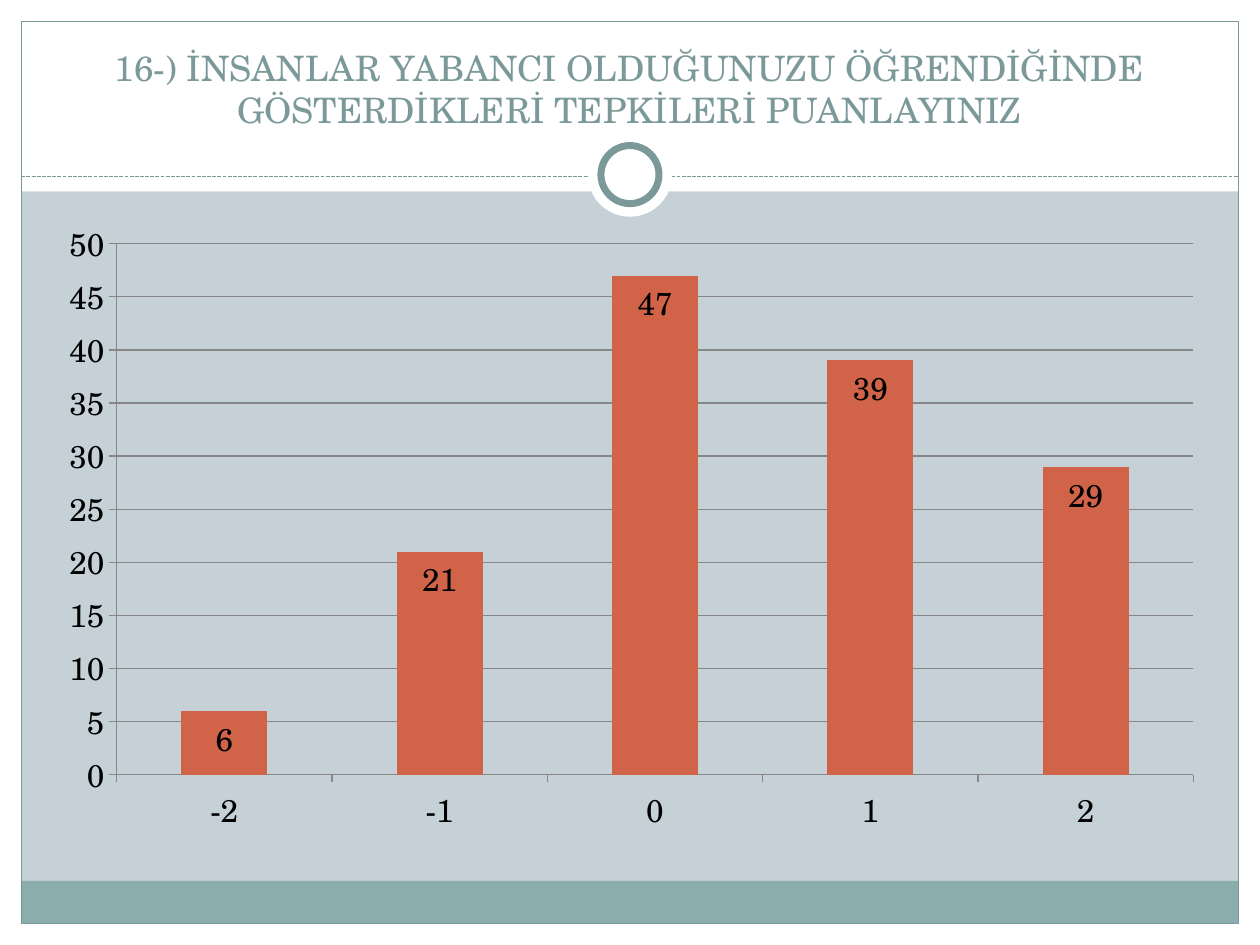
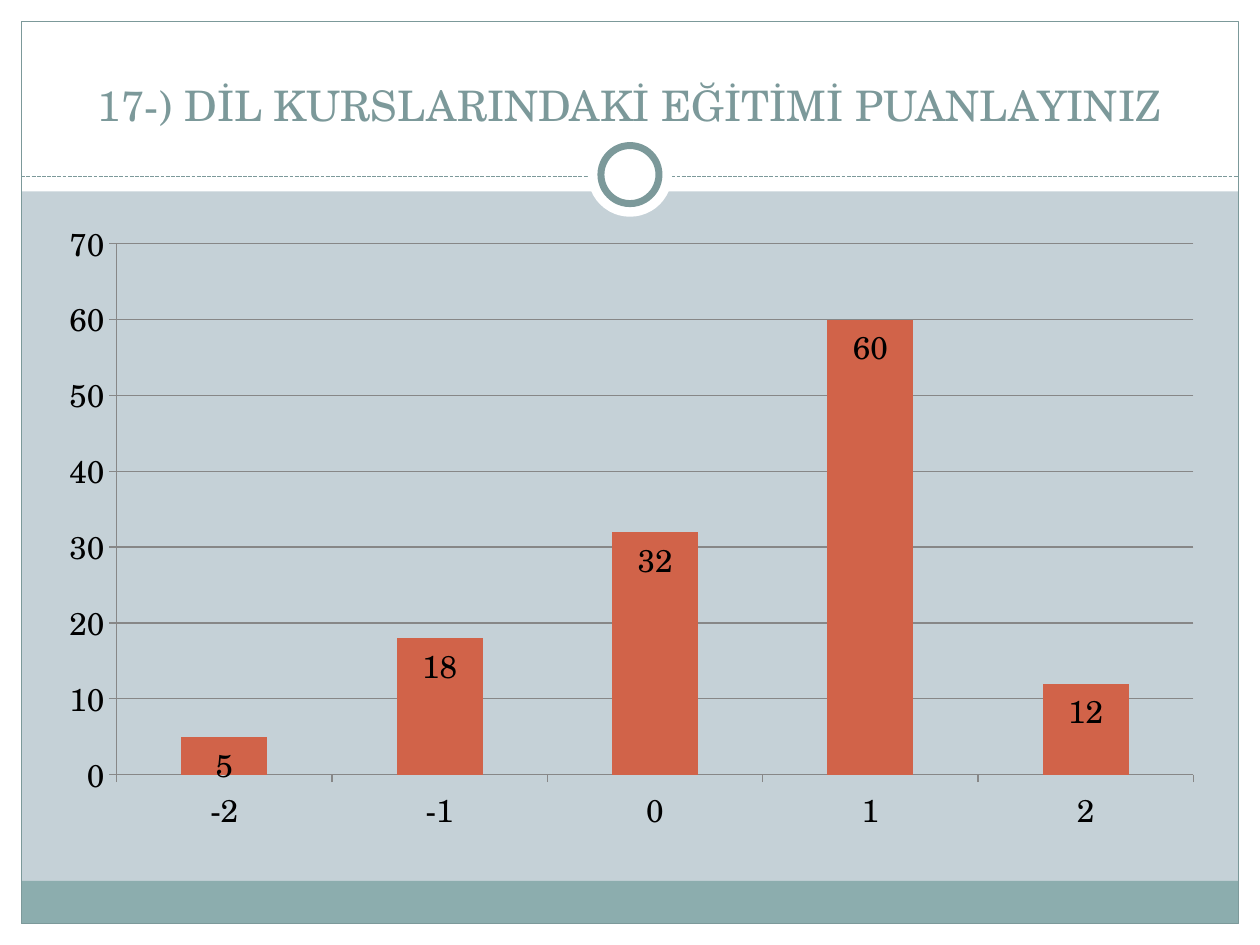
"""Build two survey slides, each with a column chart of scores from -2 to 2."""
from dataclasses import dataclass
from typing import Optional

from lxml.etree import SubElement
from pptx import Presentation
from pptx.chart.data import CategoryChartData
from pptx.dml.color import RGBColor
from pptx.enum.chart import XL_CHART_TYPE, XL_LABEL_POSITION, XL_TICK_MARK
from pptx.enum.dml import MSO_LINE
from pptx.enum.shapes import MSO_CONNECTOR, MSO_SHAPE
from pptx.enum.text import MSO_ANCHOR, PP_ALIGN
from pptx.oxml import parse_xml
from pptx.oxml.ns import nsdecls, qn
from pptx.slide import Slide
from pptx.util import Cm, Pt

COLORS = {
    "background": "C5D1D7",
    "margin": "FFFFFF",
    "footer": "8CADAE",
    "accent": "7C999A",
    "column": "D16349",
    "grid": "878787",
    "text": "000000",
}
FONT = "TeX Gyre Schola"
WIDTH, HEIGHT = 25.4, 19.05
MARGIN = 0.43
HEADER_HEIGHT = 3.86
FOOTER_HEIGHT = 0.86
DIVIDER_Y = 3.56
RING_CENTER_Y = 3.52
SCORES = ("-2", "-1", "0", "1", "2")
PLOT_AREA = {"x": 0.064, "y": 0.053, "w": 0.919, "h": 0.843}


@dataclass(frozen=True)
class Part:
    """A preset shape of the frame, in centimetres."""
    left: float
    top: float
    width: float
    height: float
    fill: Optional[str] = None
    line_width: float = 0
    preset: MSO_SHAPE = MSO_SHAPE.RECTANGLE


@dataclass(frozen=True)
class Question:
    """A survey question with its number of answers per score."""
    title: str
    title_size: int
    answers: tuple[int, ...]


def ring_part(diameter: float, line_width: float = 0) -> Part:
    """Return a white circle centred on the divider."""
    return Part((WIDTH - diameter) / 2, RING_CENTER_Y - diameter / 2,
                diameter, diameter, "margin", line_width, MSO_SHAPE.OVAL)


INNER_WIDTH = WIDTH - 2 * MARGIN
BANDS = (
    Part(0, HEIGHT - MARGIN, WIDTH, MARGIN, "margin"),
    Part(0, 0, WIDTH, HEADER_HEIGHT, "margin"),
    Part(0, 0, MARGIN, HEIGHT, "margin"),
    Part(WIDTH - MARGIN, 0, MARGIN, HEIGHT, "margin"),
    Part(MARGIN, HEIGHT - MARGIN - FOOTER_HEIGHT, INNER_WIDTH, FOOTER_HEIGHT, "footer"),
    Part(MARGIN, MARGIN, INNER_WIDTH, HEIGHT - 2 * MARGIN, line_width=0.75),
)
RINGS = (ring_part(1.7), ring_part(1.17, line_width=4))
QUESTIONS = (
    Question("16-) İNSANLAR YABANCI OLDUĞUNUZU ÖĞRENDİĞİNDE GÖSTERDİKLERİ TEPKİLERİ PUANLAYINIZ",
             20, (6, 21, 47, 39, 29)),
    Question("17-) DİL KURSLARINDAKİ EĞİTİMİ PUANLAYINIZ", 24, (5, 18, 32, 60, 12)),
)


def color(name: str) -> RGBColor:
    """Return a named colour of the palette."""
    return RGBColor.from_string(COLORS[name])


def draw_part(slide: Slide, part: Part) -> None:
    """Draw one shape of the frame."""
    shape = slide.shapes.add_shape(part.preset, Cm(part.left), Cm(part.top),
                                   Cm(part.width), Cm(part.height))
    shape.shadow.inherit = False
    if part.fill:
        shape.fill.solid()
        shape.fill.fore_color.rgb = color(part.fill)
    else:
        shape.fill.background()
    if part.line_width:
        shape.line.color.rgb = color("accent")
        shape.line.width = Pt(part.line_width)
    else:
        shape.line.fill.background()


def draw_divider(slide: Slide) -> None:
    """Draw the dashed line under the title."""
    divider = slide.shapes.add_connector(MSO_CONNECTOR.STRAIGHT, Cm(MARGIN), Cm(DIVIDER_Y),
                                         Cm(WIDTH - MARGIN), Cm(DIVIDER_Y))
    divider.line.color.rgb = color("accent")
    divider.line.width = Pt(0.75)
    divider.line.dash_style = MSO_LINE.SQUARE_DOT
    SubElement(divider.element.spPr, qn("a:effectLst"))


def draw_frame(slide: Slide) -> None:
    """Draw the background, bands, divider and rings."""
    slide.background.fill.solid()
    slide.background.fill.fore_color.rgb = color("background")
    for band in BANDS:
        draw_part(slide, band)
    draw_divider(slide)
    for ring in RINGS:
        draw_part(slide, ring)


def draw_text(slide: Slide, text: str, *, left: float, top: float, width: float, height: float,
              size: float, color_name: str, align: PP_ALIGN, anchor: MSO_ANCHOR) -> None:
    """Draw a wrapped text box."""
    frame = slide.shapes.add_textbox(Cm(left), Cm(top), Cm(width), Cm(height)).text_frame
    frame.word_wrap = True
    frame.vertical_anchor = anchor
    paragraph = frame.paragraphs[0]
    paragraph.alignment = align
    run = paragraph.add_run()
    run.text = text
    run.font.name = FONT
    run.font.size = Pt(size)
    run.font.color.rgb = color(color_name)


def draw_chart(slide: Slide, answers: tuple[int, ...]) -> None:
    """Draw the column chart of answers per score."""
    data = CategoryChartData()
    data.categories = SCORES
    data.add_series("Series 1", answers)
    chart = slide.shapes.add_chart(XL_CHART_TYPE.COLUMN_CLUSTERED, Cm(0.84), Cm(4.24),
                                   Cm(23.62), Cm(12.7), data).chart
    chart.has_title = False
    chart.has_legend = False
    chart.font.name = FONT
    chart.font.size = Pt(18)
    chart.font.color.rgb = color("text")

    chart.value_axis.has_major_gridlines = True
    for line in (chart.category_axis.format.line, chart.value_axis.format.line,
                 chart.value_axis.major_gridlines.format.line):
        line.color.rgb = color("grid")
        line.width = Pt(0.75)
    for axis in (chart.category_axis, chart.value_axis):
        axis.major_tick_mark = XL_TICK_MARK.OUTSIDE

    columns = chart.plots[0]
    columns.gap_width = 150
    columns.vary_by_categories = False
    columns.has_data_labels = True
    columns.data_labels.show_value = True
    columns.data_labels.position = XL_LABEL_POSITION.INSIDE_END
    columns.series[0].format.fill.solid()
    columns.series[0].format.fill.fore_color.rgb = color("column")

    plot_area = chart.element.find(".//" + qn("c:plotArea"))
    for automatic in plot_area.findall(qn("c:layout")):
        plot_area.remove(automatic)
    modes = "".join(f'<c:{axis}Mode val="edge"/>' for axis in "xy")
    sizes = "".join(f'<c:{key} val="{share}"/>' for key, share in PLOT_AREA.items())
    plot_area.insert(0, parse_xml(
        f'<c:layout {nsdecls("c")}><c:manualLayout><c:layoutTarget val="inner"/>'
        f"{modes}{sizes}</c:manualLayout></c:layout>"))


def main() -> None:
    """Build and save the presentation."""
    deck = Presentation()
    deck.slide_width, deck.slide_height = Cm(WIDTH), Cm(HEIGHT)
    for question in QUESTIONS:
        slide = deck.slides.add_slide(deck.slide_layouts[6])
        draw_frame(slide)
        draw_text(slide, question.title, left=0.84, top=0.64, width=23.7, height=2.11,
                  size=question.title_size, color_name="accent",
                  align=PP_ALIGN.CENTER, anchor=MSO_ANCHOR.BOTTOM)
        draw_chart(slide, question.answers)
    deck.save("out.pptx")


if __name__ == "__main__":
    main()
